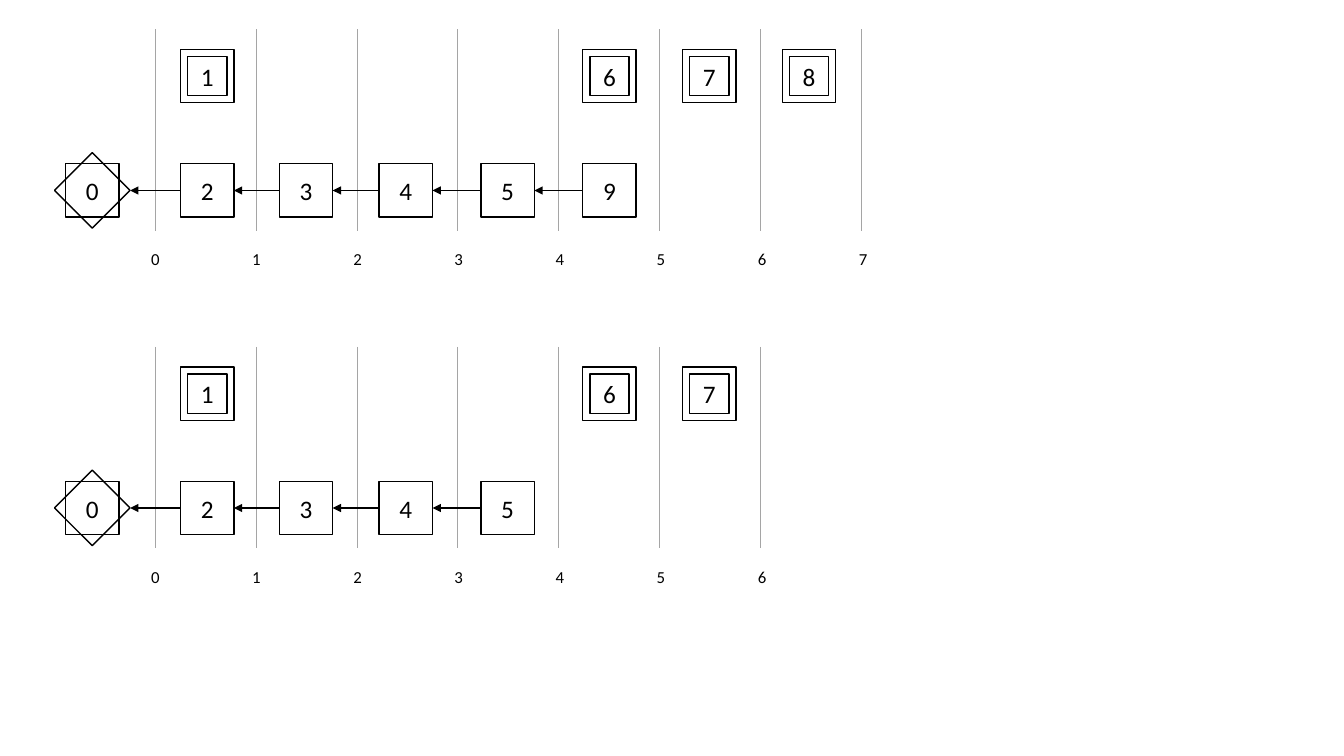
from lxml import etree
from pptx import Presentation, util as u
from pptx.dml.color import RGBColor
from pptx.enum import shapes, text
from pptx.oxml import ns

BLACK = RGBColor(0, 0, 0)
GRID = RGBColor(0xA5, 0xA5, 0xA5)
FONT = "Calibri"
PLAIN_TABLE = "{2D5ABB26-0587-4C30-8999-92F81FD0307C}"

TIMELINES = [
    {"top": 0.29, "slots": 7, "chain": ["2", "3", "4", "5", "9"],
     "framed": {0: "1", 4: "6", 5: "7", 6: "8"}},
    {"top": 3.44, "slots": 6, "chain": ["2", "3", "4", "5"],
     "framed": {0: "1", 4: "6", 5: "7"}},
]
BLOCK_LEFTS = [1.79, 2.77, 3.76, 4.77, 5.78, 6.77, 7.76]
GRID_LEFT, SLOT = 1.54, 1
BLOCK, INNER = 0.53, 0.39
START_LEFT, DIAMOND_TIP = 0.65, 1.29
FRAMED_DROP, CHAIN_DROP, LABEL_DROP = 0.2, 1.335, 2.13


def style_text(frame, size):
    for span in frame.paragraphs[0].runs:
        span.font.name = FONT
        span.font.size = u.Pt(size)
        span.font.color.rgb = BLACK


def add_square(parent, left, top, size, label=""):
    box = parent.add_shape(shapes.MSO_SHAPE.RECTANGLE, u.Inches(left),
                           u.Inches(top), u.Inches(size), u.Inches(size))
    box.shadow.inherit = False
    box.fill.background()
    box.line.color.rgb = BLACK
    box.line.width = u.Pt(1)
    if label:
        frame = box.text_frame
        frame.text = label
        frame.vertical_anchor = text.MSO_ANCHOR.MIDDLE
        frame.paragraphs[0].alignment = text.PP_ALIGN.CENTER
        style_text(frame, 18)
    return box


def add_label(page, left, top, label):
    box = page.shapes.add_textbox(u.Inches(left), u.Inches(top),
                                  u.Inches(0.29), u.Inches(0.3))
    frame = box.text_frame
    frame.text = label
    frame.word_wrap = False
    frame.auto_size = text.MSO_AUTO_SIZE.SHAPE_TO_FIT_TEXT
    style_text(frame, 12)


def add_grid(page, top, slots):
    frame = page.shapes.add_table(2, slots, u.Inches(GRID_LEFT), u.Inches(top),
                                  u.Inches(slots * SLOT), u.Inches(2))
    table = frame.table
    table.first_row = table.horz_banding = False
    table._tbl.tblPr.find(ns.qn("a:tableStyleId")).text = PLAIN_TABLE
    for cell in table.iter_cells():
        cell.fill.background()
        properties = cell._tc.get_or_add_tcPr()
        for position, side in enumerate(("a:lnL", "a:lnR")):
            border = etree.Element(ns.qn(side), w=str(u.Pt(0.5)))
            fill = etree.SubElement(border, ns.qn("a:solidFill"))
            etree.SubElement(fill, ns.qn("a:srgbClr"), val=str(GRID))
            properties.insert(position, border)


def add_arrow(page, source, target, tip, middle):
    arrow = page.shapes.add_connector(
        shapes.MSO_CONNECTOR.STRAIGHT, source.left, u.Inches(middle),
        u.Inches(tip), u.Inches(middle))
    arrow.begin_connect(source, 1)
    if target is not None:
        arrow.end_connect(target, 3)
    arrow.line.color.rgb = BLACK
    arrow.line.width = u.Pt(1)
    etree.SubElement(arrow.line._get_or_add_ln(), ns.qn("a:tailEnd"), type="triangle")
    etree.SubElement(arrow._element.spPr, ns.qn("a:effectLst"))


def add_timeline(page, top, slots, chain, framed):
    for number in range(slots + 1):
        add_label(page, 1.4 + number * 1.003, top + LABEL_DROP, str(number))
    add_grid(page, top, slots)

    chain_top = top + CHAIN_DROP
    start = page.shapes.add_group_shape()
    add_square(start.shapes, START_LEFT, chain_top, BLOCK, "0")
    add_square(start.shapes, START_LEFT, chain_top, BLOCK).rotation = 45

    inset = (BLOCK - INNER) / 2
    for slot, label in framed.items():
        left, framed_top = BLOCK_LEFTS[slot], top + FRAMED_DROP
        group = page.shapes.add_group_shape()
        add_square(group.shapes, left, framed_top, BLOCK, label)
        add_square(group.shapes, left + inset, framed_top + inset, INNER)

    previous, tip = None, DIAMOND_TIP
    for left, label in zip(BLOCK_LEFTS, chain):
        block = add_square(page.shapes, left, chain_top, BLOCK, label)
        add_arrow(page, block, previous, tip, chain_top + BLOCK / 2)
        previous, tip = block, left + BLOCK


def main():
    deck = Presentation()
    deck.slide_width, deck.slide_height = u.Inches(13.33), u.Inches(7.5)
    page = deck.slides.add_slide(deck.slide_layouts[6])
    for timeline in TIMELINES:
        add_timeline(page, **timeline)
    deck.save("out.pptx")


if __name__ == "__main__":
    main()
